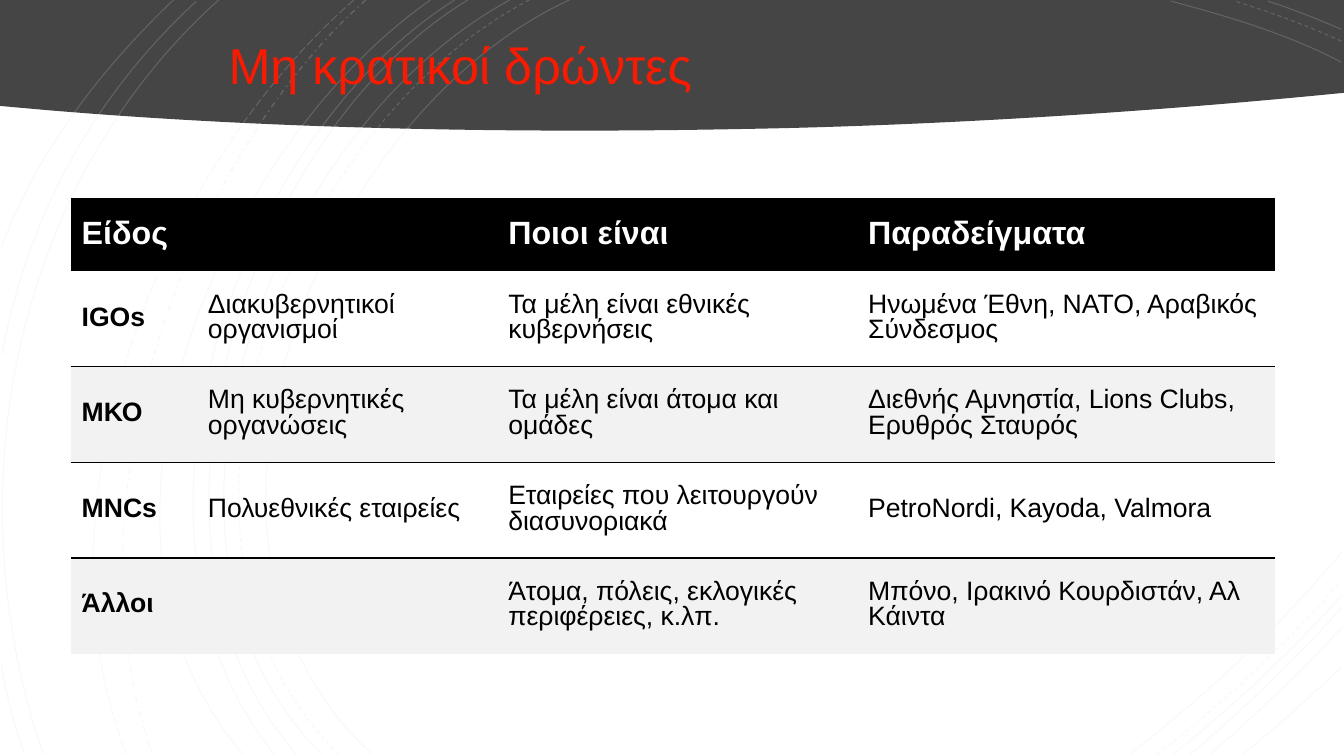
from lxml.etree import SubElement
from pptx import Presentation
from pptx.dml.color import RGBColor
from pptx.enum.dml import MSO_LINE_DASH_STYLE as Dash
from pptx.enum.text import MSO_ANCHOR as Anchor
from pptx.oxml import parse_xml
from pptx.oxml.ns import qn
from pptx.util import Cm, Pt

COLORS = {
    "band": "454545", "arc": "E0E0E0", "title": "F81B02",
    "black": "000000", "white": "FFFFFF", "shade": "F2F2F2",
}
RGB = {name: RGBColor.from_string(value) for name, value in COLORS.items()}
FONT = "Arial"
NO_STYLE = "{2D5ABB26-0587-4C30-8999-92F81FD0307C}"
DRAWING_NS = "http://schemas.openxmlformats.org/drawingml/2006/main"

prs = Presentation()
prs.slide_width, prs.slide_height = Cm(33.87), Cm(19.05)
slide = prs.slides.add_slide(prs.slide_layouts[6])


def add_outline(points, curve_starts, closed):
    start, *rest = [(Cm(x), Cm(y)) for x, y in points]
    builder = slide.shapes.build_freeform(*start)
    builder.add_line_segments(rest, close=closed)
    outline = builder.convert_to_shape()
    outline.shadow.inherit = False
    segments = list(outline._element.iter(qn("a:lnTo")))
    for first in curve_starts:
        curve = parse_xml(f'<a:cubicBezTo xmlns:a="{DRAWING_NS}"/>')
        segments[first].addprevious(curve)
        for segment in segments[first:first + 3]:
            curve.append(segment[0])
            segment.getparent().remove(segment)
    return outline


def style_text(paragraph, text, size, color, bold=False):
    paragraph.text = text
    paragraph.font.name = FONT
    paragraph.font.size = Pt(size)
    paragraph.font.bold = bold
    paragraph.font.color.rgb = RGB[color]


band = add_outline(
    [(0, 0), (33.87, 0), (33.87, 2.34), (33.66, 2.36),
     (28.17, 2.9), (22.89, 3.18), (18.77, 3.25),
     (13.72, 3.35), (7.39, 3.3), (1.12, 2.77), (0, 2.67)],
    [3, 6], True)
band.fill.solid()
band.fill.fore_color.rgb = RGB["band"]
band.line.fill.background()

ARCS = [
    (Dash.SOLID, 0.75, [
        [(14.35, 0), (8, 2.92), (3.63, 13.72), (9.37, 19)],
        [(33.81, 1.57), (32.46, 0.86), (30.94, 0.41), (29.51, 0.03)],
        [(28.47, 19), (30.4, 17.53), (32.23, 15.8), (33.81, 13.92)]]),
    (Dash.DASH, 0.75, [
        [(13.34, 0), (7.24, 3.18), (3.12, 13.64), (8.53, 19)],
        [(33.81, 1.04), (32.94, 0.64), (32, 0.3), (31.12, 0.03)],
        [(29.16, 19.02), (30.81, 17.73), (32.39, 16.26), (33.78, 14.66)]]),
    (Dash.SOLID, 0.75, [
        [(12.85, 0), (6.86, 3.23), (2.79, 13.64), (8.1, 19)],
        [(33.81, 0.74), (33.2, 0.48), (32.59, 0.23), (31.95, 0.03)],
        [(29.57, 19), (31.06, 17.81), (32.51, 16.46), (33.81, 15.01)],
        [(11.79, 0), (6.2, 3.38), (2.79, 13.74), (7.47, 19)],
        [(30, 19), (31.34, 17.88), (32.61, 16.64), (33.81, 15.32)],
        [(11.46, 0), (5.87, 3.51), (2.46, 13.54), (6.91, 19)],
        [(30.51, 19), (31.65, 18.01), (32.77, 16.94), (33.81, 15.82)],
        [(10.85, 0), (5.51, 3.73), (1.35, 13.44), (6.12, 19)],
        [(31.34, 19), (32.18, 18.31), (32.99, 17.58), (33.81, 16.81)]]),
    (Dash.DASH_DOT, 1, [
        [(9.22, 0), (4.47, 4.22), (1.65, 12.93), (3.84, 19)]]),
    (Dash.LONG_DASH, 0.75, [
        [(8.92, 0), (3.99, 4.29), (0.74, 12.67), (3.18, 19)]]),
    (Dash.SOLID, 0.75, [
        [(5.51, 0), (0.28, 4.7), (-1.17, 12.45), (1.09, 19)],
        [(4.95, 0.03), (2.34, 2.44), (0.71, 5.44), (0.05, 8.92)],
        [(0.03, 16.71), (0.15, 17.5), (0.36, 18.26), (0.61, 19)],
        [(4.37, 0), (2.54, 1.75), (0.94, 3.81), (0.05, 6.2)]]),
]
for dash, width, curves in ARCS:
    for points in curves:
        arc = add_outline(points, [0], False)
        arc.fill.background()
        arc.line.color.rgb = RGB["arc"]
        arc.line.width = Pt(width)
        arc.line.dash_style = dash
        arc_color = next(arc.line._ln.iter(qn("a:srgbClr")))
        SubElement(arc_color, qn("a:alpha"), val="20000")

title = slide.shapes.add_textbox(Cm(5.51), Cm(0.64), Cm(20.5), Cm(1.98)).text_frame
title.word_wrap = True
title.vertical_anchor = Anchor.MIDDLE
style_text(title.paragraphs[0], "Μη κρατικοί δρώντες", 36, "title")

ACTORS = [
    ["Είδος", "", "Ποιοι είναι", "Παραδείγματα"],
    ["IGOs", "Διακυβερνητικοί οργανισμοί", "Τα μέλη είναι εθνικές κυβερνήσεις",
     "Ηνωμένα Έθνη, NATO, Aραβικός Σύνδεσμος"],
    ["ΜΚΟ", "Μη κυβερνητικές οργανώσεις", "Τα μέλη είναι άτομα και ομάδες",
     "Διεθνής Αμνηστία, Lions Clubs, Ερυθρός Σταυρός"],
    ["MNCs", "Πολυεθνικές εταιρείες", "Εταιρείες που λειτουργούν διασυνοριακά",
     "PetroNordi, Kayoda, Valmora"],
    ["Άλλοι", "", "Άτομα, πόλεις, εκλογικές περιφέρειες, κ.λπ.",
     "Μπόνο, Iρακινό Κουρδιστάν, Αλ Κάιντα"],
]
actors_frame = slide.shapes.add_table(
    len(ACTORS), 4, Cm(1.78), Cm(5), Cm(30.34), Cm(11.47))
actors = actors_frame.table
actors.first_row = actors.horz_banding = False
next(actors_frame._element.iter(qn("a:tableStyleId"))).text = NO_STYLE
for column, width in zip(actors.columns, [3.18, 7.57, 9.07, 10.52]):
    column.width = Cm(width)

for r, texts in enumerate(ACTORS):
    header = r == 0
    shaded = not header and r % 2 == 0
    actors.rows[r].height = Cm(1.83 if header else 2.41)
    for c, text in enumerate(texts):
        cell = actors.cell(r, c)
        cell.vertical_anchor = Anchor.MIDDLE
        cell.margin_left, cell.margin_right = Cm(0.28), Cm(0.2)
        cell.margin_top, cell.margin_bottom = Cm(0.41 if header else 0.38), Cm(0.41)
        if header or shaded:
            cell.fill.solid()
            cell.fill.fore_color.rgb = RGB["black" if header else "shade"]
        else:
            cell.fill.background()
        if not header:
            edge = "lnT" if shaded else "lnB"
            cell._tc.get_or_add_tcPr().insert(0, parse_xml(
                f'<a:{edge} xmlns:a="{DRAWING_NS}" w="{Pt(1)}"><a:solidFill>'
                f'<a:srgbClr val="{COLORS["black"]}"/></a:solidFill></a:{edge}>'))
        if text:
            paragraph = cell.text_frame.paragraphs[0]
            paragraph.line_spacing = 0.87
            style_text(paragraph, text, 23 if header else 19,
                       "white" if header else "black", header or c == 0)

prs.save("out.pptx")
